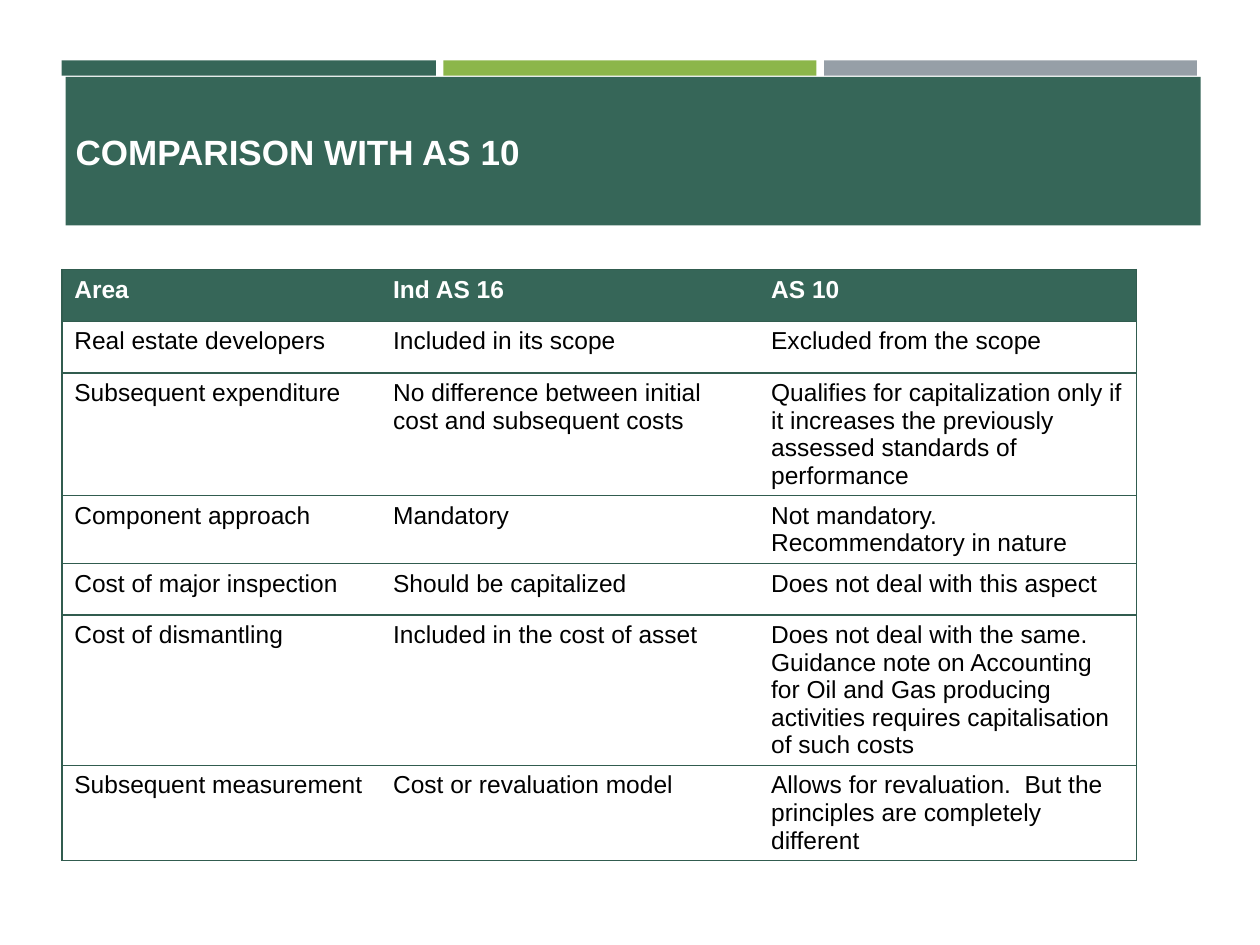
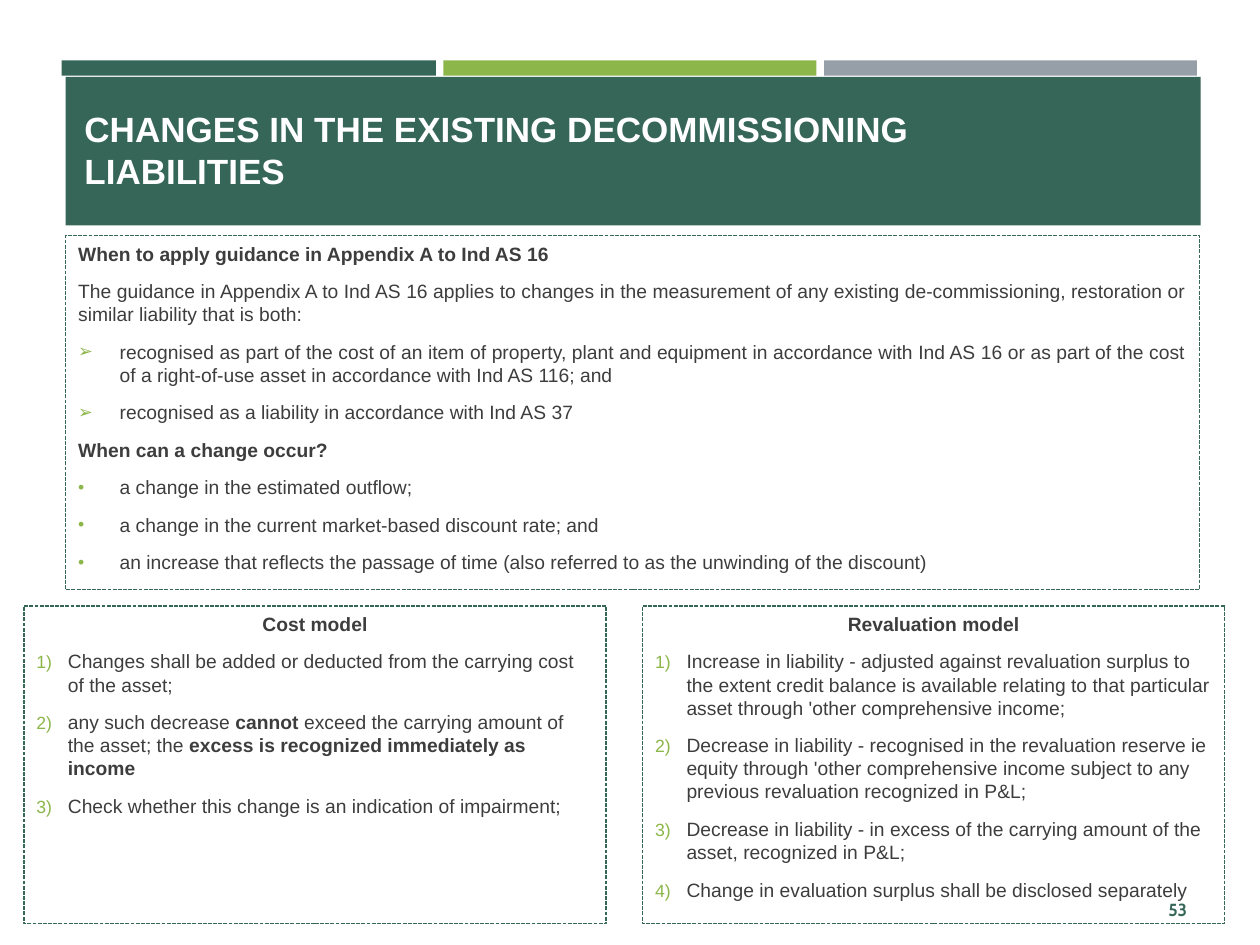
"""Build two slides on Ind AS 16: a comparison with AS 10 and decommissioning changes."""
from lxml.etree import SubElement
from pptx import Presentation
from pptx.dml.color import RGBColor
from pptx.enum.dml import MSO_LINE
from pptx.enum.shapes import MSO_SHAPE
from pptx.enum.text import MSO_ANCHOR, MSO_AUTO_SIZE, PP_ALIGN as ALIGN
from pptx.oxml.ns import qn
from pptx.util import Inches, Pt

COLORS = {
    "green": "366658",
    "lime": "8CB64A",
    "grey": "969FA7",
    "rule": "315C4F",
    "text": "3D3D3D",
    "white": "FFFFFF",
    "black": "000000",
}
BANDS = [
    ("green", 0.49, 0.48, 2.97, 0.12),
    ("lime", 3.52, 0.48, 2.96, 0.12),
    ("grey", 6.54, 0.48, 2.96, 0.12),
    ("green", 0.52, 0.61, 9.01, 1.18),
]
TITLE_STYLE = {"size": 20, "color": "white", "bold": True}
HEADER_STYLE = {"size": 14, "color": "white", "bold": True}
CELL_STYLE = {"size": 14, "color": "black", "bold": False}
NUMBER_STYLE = {"size": 10, "color": "green", "bold": True, "name": "Cabin"}
BODY_SPACING = {"space_before": Pt(2.2), "space_after": Pt(6), "line_spacing": 1.0}

COMPARISON_TITLE = "COMPARISON WITH AS 10"
COMPARISON = [
    ("Area", "Ind AS 16", "AS 10"),
    ("Real estate developers", "Included in its scope", "Excluded from the scope"),
    ("Subsequent expenditure", "No difference between initial cost and subsequent costs",
     "Qualifies for capitalization only if it increases the previously assessed "
     "standards of performance"),
    ("Component approach", "Mandatory", "Not mandatory.  Recommendatory in nature"),
    ("Cost of major inspection", "Should be capitalized", "Does not deal with this aspect"),
    ("Cost of dismantling", "Included in the cost of asset",
     "Does not deal with the same.  Guidance note on Accounting for Oil and Gas "
     "producing activities requires capitalisation of such costs"),
    ("Subsequent measurement", "Cost or revaluation model",
     "Allows for revaluation.  But the principles are completely different"),
]
COLUMN_WIDTHS = (2.53, 3, 3)
ROW_HEIGHT = 0.41

CHANGES_TITLE = "CHANGES IN THE EXISTING DECOMMISSIONING LIABILITIES"
GUIDANCE = [
    ("heading", "When to apply guidance in Appendix A to Ind AS 16"),
    ("plain", "The guidance in Appendix A to Ind AS 16 applies to changes in the measurement "
              "of any existing de-commissioning, restoration or similar liability that is both:"),
    ("arrow", "recognised as part of the cost of an item of property, plant and equipment in "
              "accordance with Ind AS 16 or as part of the cost of a right-of-use asset in "
              "accordance with Ind AS 116; and"),
    ("arrow", "recognised as a liability in accordance with Ind AS 37"),
    ("heading", "When can a change occur?"),
    ("dot", "a change in the estimated outflow;"),
    ("dot", "a change in the current market-based discount rate; and"),
    ("dot", "an increase that reflects the passage of time "
            "(also referred to as the unwinding of the discount)"),
]
COST_MODEL = [
    ("model", "Cost model"),
    ("number", "Changes shall be added or deducted from the carrying cost of the asset;"),
    ("number", "any such decrease *cannot *exceed the carrying amount of the asset; the "
               "*excess is recognized immediately as income*"),
    ("number", "Check whether this change is an indication of impairment;"),
]
REVALUATION_MODEL = [
    ("model", "Revaluation model"),
    ("number", "Increase in liability - adjusted against revaluation surplus to the extent credit "
               "balance is available relating to that particular asset through 'other "
               "comprehensive income;"),
    ("number", "Decrease in liability - recognised in the revaluation reserve ie equity through "
               "'other comprehensive income subject to any previous revaluation recognized "
               "in P&L;"),
    ("number", "Decrease in liability - in excess of the carrying amount of the asset, "
               "recognized in P&L;"),
    ("number", "Change in evaluation surplus shall be disclosed separately"),
]
PARAGRAPH_KINDS = {
    "heading": {"align": ALIGN.JUSTIFY, "bold": True},
    "plain": {"align": ALIGN.JUSTIFY},
    "arrow": {"align": ALIGN.JUSTIFY, "indent": 0.33, "bullet": ("a:buChar", {"char": "➢"})},
    "dot": {"align": ALIGN.JUSTIFY, "indent": 0.33, "bullet": ("a:buChar", {"char": "•"})},
    "model": {"align": ALIGN.CENTER, "bold": True},
    "number": {"align": ALIGN.LEFT, "indent": 0.25,
               "bullet": ("a:buAutoNum", {"type": "arabicParenR"})},
}


def rgb(color):
    return RGBColor.from_string(COLORS[color])


def set_all(target, values):
    for attribute, value in values.items():
        setattr(target, attribute, value)


def place(part, left, top, width, height):
    lengths = zip(("left", "top", "width", "height"), (left, top, width, height))
    set_all(part, {side: Inches(length) for side, length in lengths})


def write(paragraph, text, size, color, bold, name="Arial"):
    run = paragraph.add_run()
    run.text = text
    set_all(run.font, {"size": Pt(size), "bold": bold, "name": name})
    run.font.color.rgb = rgb(color)


def add_child(parent, tag, **attributes):
    return SubElement(parent, qn(tag), attributes)


def add_color(parent, color):
    add_child(parent, "a:srgbClr", val=COLORS[color])


def add_bands(slide, master):
    for order, (color, *spot) in enumerate(BANDS):
        band = slide.shapes.add_shape(MSO_SHAPE.RECTANGLE, *map(Inches, spot))
        band.shadow.inherit = False
        band.fill.solid()
        band.fill.fore_color.rgb = rgb(color)
        band.line.fill.background()
        band.element.nvSpPr.cNvPr.set("id", str(101 + order))
        master.shapes.element.insert(2 + order, band.element)


def set_title(slide, text, spot, align):
    title = slide.shapes.title
    place(title, *spot)
    set_all(title.text_frame, {"vertical_anchor": MSO_ANCHOR.MIDDLE, "word_wrap": True,
                               "auto_size": MSO_AUTO_SIZE.NONE})
    paragraph = title.text_frame.paragraphs[0]
    paragraph.alignment = align
    write(paragraph, text, **TITLE_STYLE)


def set_bullet(paragraph, indent, bullet):
    properties = paragraph._p.get_or_add_pPr()
    properties.set("marL", str(Inches(indent)))
    properties.set("indent", str(-Inches(indent)))
    if bullet:
        add_color(add_child(properties, "a:buClr"), "lime")
        add_child(properties, "a:buSzPct", val="92000")
        add_child(properties, "a:buFont", typeface="Arial")
        tag, attributes = bullet
        add_child(properties, tag, **attributes)
    else:
        add_child(properties, "a:buNone")


def fill_box(box, content, spot):
    place(box, *spot)
    box.line.color.rgb = rgb("green")
    set_all(box.line, {"width": Pt(0.75), "dash_style": MSO_LINE.SQUARE_DOT})
    frame = box.text_frame
    set_all(frame, {"word_wrap": True, "auto_size": MSO_AUTO_SIZE.NONE,
                    "vertical_anchor": MSO_ANCHOR.TOP})
    for order, (kind, text) in enumerate(content):
        look = PARAGRAPH_KINDS[kind]
        paragraph = frame.add_paragraph() if order else frame.paragraphs[0]
        set_all(paragraph, {"alignment": look["align"], **BODY_SPACING})
        set_bullet(paragraph, look.get("indent", 0), look.get("bullet"))
        for part, words in enumerate(text.split("*")):
            if words:
                write(paragraph, words, 11, "text", look.get("bold", False) or part % 2 == 1)


def set_borders(cell, visible):
    properties = cell._tc.get_or_add_tcPr()
    for side in "LRTB":
        edge = add_child(properties, f"a:ln{side}", w=str(Pt(1)))
        if side in visible:
            add_color(add_child(edge, "a:solidFill"), "rule")
        else:
            add_child(edge, "a:noFill")


def add_comparison(slide):
    last = len(COLUMN_WIDTHS) - 1
    spot = (0.49, 2.14, sum(COLUMN_WIDTHS), ROW_HEIGHT * len(COMPARISON))
    table = slide.shapes.add_table(len(COMPARISON), last + 1, *map(Inches, spot)).table
    table.horz_banding = False
    for column, width in zip(table.columns, COLUMN_WIDTHS):
        column.width = Inches(width)
    for row, texts in enumerate(COMPARISON):
        for column, text in enumerate(texts):
            cell = table.cell(row, column)
            set_borders(cell, "TB" + "L" * (column == 0) + "R" * (column == last))
            if row == 0:
                cell.fill.solid()
                cell.fill.fore_color.rgb = rgb("green")
            else:
                cell.fill.background()
            write(cell.text_frame.paragraphs[0], text, **(CELL_STYLE if row else HEADER_STYLE))


def add_page_number(slide, number):
    footer = slide.shapes.add_textbox(*map(Inches, (8.68, 7.02, 0.84, 0.4)))
    set_all(footer.text_frame, {"word_wrap": True, "vertical_anchor": MSO_ANCHOR.MIDDLE})
    paragraph = footer.text_frame.paragraphs[0]
    paragraph.alignment = ALIGN.RIGHT
    write(paragraph, number, **NUMBER_STYLE)


def main():
    deck = Presentation()
    set_all(deck, {"slide_width": Inches(10), "slide_height": Inches(7.5)})
    comparison = deck.slides.add_slide(deck.slide_layouts[5])
    add_bands(comparison, deck.slide_master)
    set_title(comparison, COMPARISON_TITLE, (0.5, 0.58, 9, 1.25), ALIGN.JUSTIFY)
    add_comparison(comparison)

    changes = deck.slides.add_slide(deck.slide_layouts[1])
    set_title(changes, CHANGES_TITLE, (0.57, 0.64, 6.79, 1.1), ALIGN.LEFT)
    add_page_number(changes, "53")
    fill_box(changes.placeholders[1], GUIDANCE, (0.52, 1.87, 9, 2.81))
    for left, model in ((0.19, COST_MODEL), (5.1, REVALUATION_MODEL)):
        spot = (left, 4.81, 4.62, 2.52)
        fill_box(changes.shapes.add_textbox(*map(Inches, spot)), model, spot)
    deck.save("out.pptx")


if __name__ == "__main__":
    main()
